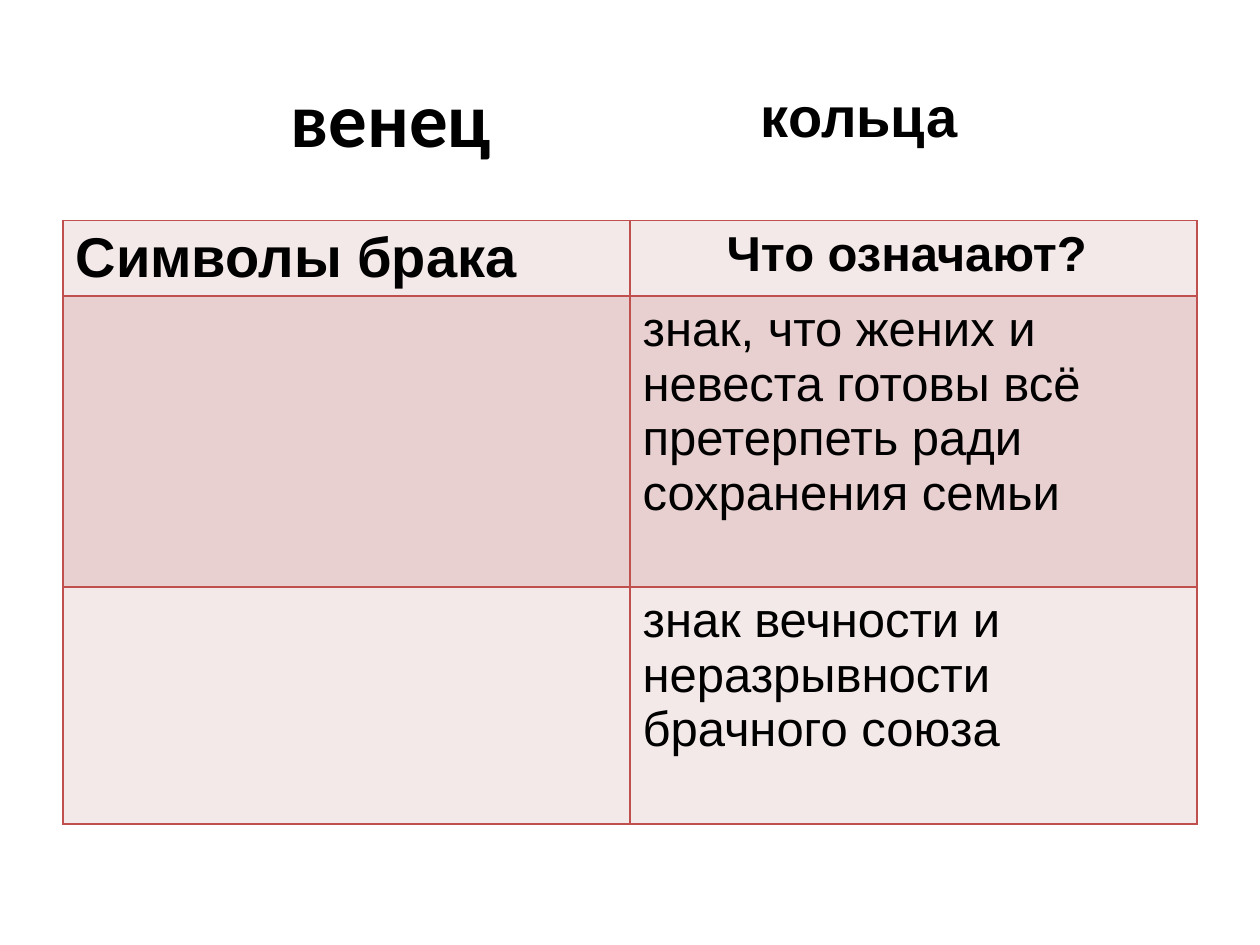
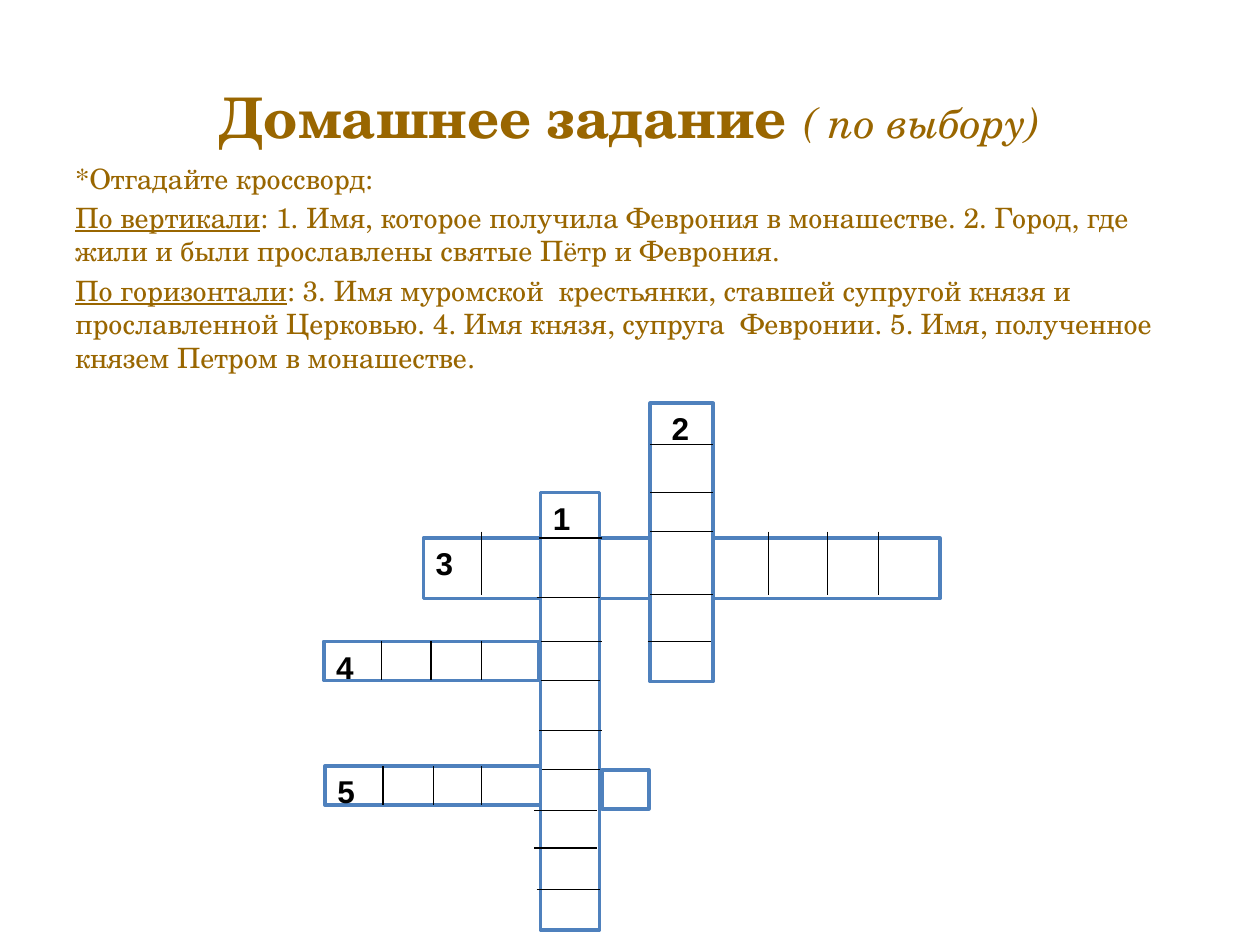
from lxml import etree
from pptx import Presentation
from pptx.dml.color import RGBColor
from pptx.enum import shapes, text
from pptx.oxml import ns
from pptx.util import Inches, Pt

BLACK = RGBColor(0, 0, 0)
WHITE = RGBColor(255, 255, 255)
BROWN = RGBColor(0x99, 0x66, 0x00)
BLUE = RGBColor(0x4F, 0x81, 0xBD)
RED = RGBColor(0xC0, 0x50, 0x4D)
PALE = RGBColor(0xF4, 0xE9, 0xE9)
ROSE = RGBColor(0xE8, 0xD0, 0xD0)

SCHOOL = {"name": "TeX Gyre Schola", "color": BROWN}
ARIAL = {"name": "Arial", "color": BLACK}
CENTER = text.PP_ALIGN.CENTER
LEFT = text.PP_ALIGN.LEFT

SYMBOLS = [
    ("Символы брака", {"size": 32, "bold": True}, LEFT),
    ("Что означают? ", {"size": 28, "bold": True}, CENTER),
    ("знак, что жених и невеста готовы всё претерпеть ради сохранения семьи",
     {"size": 28, "bold": False}, LEFT),
    ("знак вечности и неразрывности \nбрачного союза",
     {"size": 28, "bold": False}, LEFT),
]
SYMBOL_CELLS = [(0, 0), (0, 1), (1, 1), (2, 1)]
ROW_HEIGHTS = [0.6, 2.31, 1.88]

CLUES = [
    ("", "*Отгадайте кроссворд:"),
    ("По вертикали",
     ": 1. Имя, которое получила Феврония в монашестве. 2. Город, где жили и "
     "были прославлены святые Пётр и Феврония."),
    ("По горизонтали",
     ": 3. Имя муромской  крестьянки, ставшей супругой князя и прославленной "
     "Церковью. 4. Имя князя, супруга  Февронии. 5. Имя, полученное князем "
     "Петром в монашестве."),
]

# Each word: number, frame, text inset, divider direction and length, starts.
WORDS = [
    ("3", (0.79, 1.07, 4.1, 0.48), 0.1, (0, 0.5),
     [(x, 1.02) for x in (1.25, 3.53, 4, 4.4)]),
    ("2", (2.59, 0, 0.5, 2.21), 0.17, (0.5, 0),
     [(2.59, y) for y in (0.33, 0.71, 1.02, 1.52)] + [(2.57, 1.89)]),
    ("1", (1.72, 0.71, 0.47, 3.47), 0.1, (0.5, 0),
     [(1.71, 1.07), (1.69, 1.54), (1.71, 1.89), (1.69, 2.2), (1.71, 2.6),
      (1.69, 2.91), (1.67, 3.23), (1.67, 3.53), (1.69, 3.86)]),
    ("4", (0, 1.89, 1.71, 0.31), 0.1, (0, 0.31),
     [(x, 1.89) for x in (0.46, 0.85, 1.25)]),
    ("5", (0.01, 2.88, 1.71, 0.31), 0.1, (0, 0.31),
     [(x, 2.88) for x in (0.47, 0.87, 1.25)]),
    ("", (2.21, 2.91, 0.37, 0.31), 0.1, (0, 0), []),
]


def write(para, words, style):
    """Add words to a paragraph in the given font style."""
    for index, line in enumerate(words.split("\n")):
        if index:
            para.add_line_break()
        span = para.add_run()
        span.text = line
        for key, value in style.items():
            if key == "color":
                span.font.color.rgb = value
            else:
                setattr(span.font, key, Pt(value) if key == "size" else value)


def add_text(page, box, spans, **frame_format):
    """Place a wrapped text box whose first paragraph holds the spans."""
    frame = page.shapes.add_textbox(*map(Inches, box)).text_frame
    frame.word_wrap = True
    for key, value in frame_format.items():
        setattr(frame, key, value)
    for words, style in spans:
        write(frame.paragraphs[0], words, style)
    return frame


def add_title(page, box, spans, **frame_format):
    """Place a centred title in the middle of its box."""
    frame = add_text(page, box, spans, vertical_anchor=text.MSO_ANCHOR.MIDDLE,
                     **frame_format)
    frame.paragraphs[0].alignment = CENTER


def add_borders(cell):
    """Draw a thin red line on every side of a cell."""
    properties = cell._tc.get_or_add_tcPr()
    for index, side in enumerate(("lnL", "lnR", "lnT", "lnB")):
        line = etree.Element(ns.qn(f"a:{side}"), w=str(Pt(1)))
        fill = etree.SubElement(line, ns.qn("a:solidFill"))
        etree.SubElement(fill, ns.qn("a:srgbClr"), val=str(RED))
        properties.insert(index, line)


def add_symbol_table(page, box):
    """Build the table of marriage symbols and their meanings."""
    table = page.shapes.add_table(len(ROW_HEIGHTS), 2, *map(Inches, box)).table
    table.first_row = table.horz_banding = False
    for index, height in enumerate(ROW_HEIGHTS):
        table.rows[index].height = Inches(height)
        for cell in table.rows[index].cells:
            cell.fill.solid()
            cell.fill.fore_color.rgb = ROSE if index % 2 else PALE
            add_borders(cell)
    for (row, column), (words, style, alignment) in zip(SYMBOL_CELLS, SYMBOLS):
        para = table.cell(row, column).text_frame.paragraphs[0]
        para.alignment = alignment
        write(para, words, ARIAL | style)


def add_clues(page, box):
    """List the crossword clues with underlined headings."""
    frame = add_text(page, box, [])
    for index, (heading, clue) in enumerate(CLUES):
        para = frame.add_paragraph() if index else frame.paragraphs[0]
        if index:
            para.space_before = Pt(3.2)
            write(para, heading, SCHOOL | {"size": 16, "underline": True})
        write(para, clue, SCHOOL | {"size": 16})


def add_word(page, box, number, inset):
    """Draw the frame of one crossword word with its number."""
    shape = page.shapes.add_shape(shapes.MSO_SHAPE.RECTANGLE, *map(Inches, box))
    shape.shadow.inherit = False
    shape.fill.solid()
    shape.fill.fore_color.rgb = WHITE
    shape.line.color.rgb = BLUE
    shape.line.width = Pt(2)
    if number:
        frame = shape.text_frame
        frame.vertical_anchor = text.MSO_ANCHOR.TOP
        frame.margin_left = Inches(inset)
        frame.paragraphs[0].alignment = LEFT
        write(frame.paragraphs[0], number, ARIAL | {"size": 18, "bold": True})


def add_divider(page, x, y, run, drop):
    """Draw a thin black line between two letters."""
    line = page.shapes.add_connector(
        shapes.MSO_CONNECTOR.STRAIGHT, *map(Inches, (x, y, x + run, y + drop)))
    line.line.color.rgb = BLACK
    line.line.width = Pt(0.75)
    etree.SubElement(line._element.spPr, ns.qn("a:effectLst"))


def add_crossword(page, left, top):
    """Draw all crossword words relative to a corner."""
    for number, (x, y, width, height), inset, direction, starts in WORDS:
        add_word(page, (left + x, top + y, width, height), number, inset)
        for start_x, start_y in starts:
            add_divider(page, left + start_x, top + start_y, *direction)


def build_symbols(page):
    """Build the slide on marriage symbols."""
    add_symbol_table(page, (0.5, 1.75, 9, sum(ROW_HEIGHTS)))
    crown = {"name": "Calibri", "color": BLACK, "size": 44, "bold": True}
    add_title(page, (0.5, 0.3, 5.76, 1.25), [("венец", crown)],
              margin_right=Inches(0.65))
    add_text(page, (5.94, 0.6, 2.11, 0.64),
             [("кольца", ARIAL | {"size": 32, "bold": True})])


def build_homework(page):
    """Build the homework slide with its crossword."""
    add_title(page, (0.5, 0.3, 9, 1.25), [
        ("Домашнее задание ", SCHOOL | {"size": 32, "bold": True}),
        ("( по выбору)", SCHOOL | {"size": 24, "italic": True}),
    ])
    add_clues(page, (0.5, 1.23, 9, 5.47))
    add_crossword(page, 2.57, 3.2)


def main():
    """Build and save the deck."""
    deck = Presentation()
    deck.slide_width, deck.slide_height = Inches(10), Inches(7.5)
    for build in (build_symbols, build_homework):
        build(deck.slides.add_slide(deck.slide_layouts[6]))
    deck.save("out.pptx")


if __name__ == "__main__":
    main()
